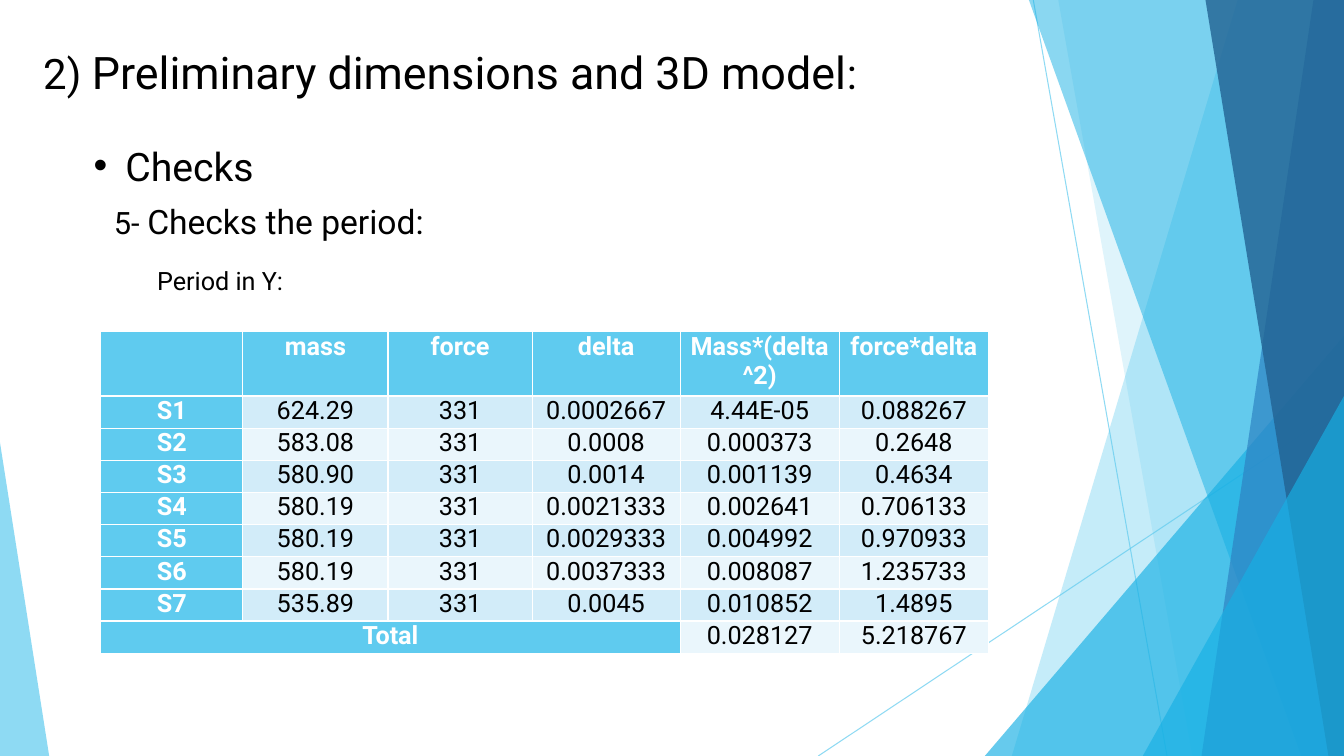
from lxml.etree import SubElement
from pptx import Presentation
from pptx.dml.color import RGBColor
from pptx.enum.shapes import MSO_CONNECTOR, MSO_SHAPE
from pptx.enum.text import MSO_ANCHOR, PP_ALIGN
from pptx.oxml.ns import qn
from pptx.util import Cm, Pt

THEME = {
    "font": "Roboto",
    "text": "000000", "light": "FFFFFF",
    "sky": "5FCBEF", "cyan": "17B0E4", "blue": "2E83C3", "navy": "226292",
    "bands": ("D2ECF9", "EAF6FC"),
    "title": 32, "title_mark": 30, "heading": 28,
    "check": 24, "check_mark": 22, "body": 18,
    "hairline": 0.75,
}
SLIDE_WIDTH, SLIDE_HEIGHT = 33.87, 19.05

# start x, start y, end x, end y
RAYS = [(26.04, 0, 29.41, SLIDE_HEIGHT), (SLIDE_WIDTH, 10.24, 20.62, SLIDE_HEIGHT)]
# Bands reach the right edge: kind, top left x, bottom left x, colour, opacity
# Triangles stand on the bottom edge: kind, left, width, height, peak, colour, opacity
FACETS = [
    ("band", 31.19, 25.5, "sky", 36),
    ("band", 26.67, 30.05, "sky", 20),
    ("triangle", 24.82, 9.05, 10.59, 1, "cyan", 66),
    ("band", 25.93, 32.79, "cyan", 50),
    ("band", 33.1, 30.28, "blue", 70),
    ("band", 30.38, 33.48, "navy", 80),
    ("triangle", 28.8, 5.07, 9.07, 1, "cyan", 66),
    ("triangle", 0, 1.24, 7.9, 0, "sky", 70),
]
# left, top, width, height, bulleted, (text, size) spans
TEXTS = [
    (0.84, 0.99, 22.5, 1.63, False,
     [("2) ", "title_mark"), ("Preliminary dimensions and 3D model", "title"),
      (":", "title_mark")]),
    (2.11, 3.45, 16.84, 1.45, True, [("Checks", "heading")]),
    (2.62, 4.95, 8.66, 1.28, False,
     [("5- ", "check_mark"), ("Checks the period:", "check")]),
    (3.71, 6.55, 8.1, 1.8, False, [("Period in Y:", "body")]),
]
HEADER = ["", "mass", "force", "delta", "Mass*(delta^2)", "force*delta"]
STOREYS = [
    ["S1", "624.29", "331", "0.0002667", "4.44E-05", "0.088267"],
    ["S2", "583.08", "331", "0.0008", "0.000373", "0.2648"],
    ["S3", "580.90", "331", "0.0014", "0.001139", "0.4634"],
    ["S4", "580.19", "331", "0.0021333", "0.002641", "0.706133"],
    ["S5", "580.19", "331", "0.0029333", "0.004992", "0.970933"],
    ["S6", "580.19", "331", "0.0037333", "0.008087", "1.235733"],
    ["S7", "535.89", "331", "0.0045", "0.010852", "1.4895"],
]
TOTAL = ["Total", "", "", "", "0.028127", "5.218767"]
TABLE_LEFT, TABLE_TOP = 2.54, 8.36
COLUMN_WIDTHS = [3.58, 3.66, 3.63, 3.73, 4.01, 3.76]
HEADER_HEIGHT, ROW_HEIGHT = 1.62, 0.81
INDENT = 0.8


def apply(target, values):
    for name, value in values.items():
        setattr(target, name, value)


def colour(name):
    return RGBColor.from_string(THEME.get(name, name))


def set_opacity(shape, percent):
    paint = shape._element.spPr.find(".//" + qn("a:srgbClr"))
    SubElement(paint, qn("a:alpha"), val=str(percent * 1000))


def style_font(font, size, colour_name="text", bold=False):
    apply(font, {"name": THEME["font"], "size": Pt(THEME[size]), "bold": bold})
    font.color.rgb = colour(colour_name)


def add_ray(page, start_x, start_y, end_x, end_y):
    ray = page.shapes.add_connector(
        MSO_CONNECTOR.STRAIGHT, Cm(start_x), Cm(start_y), Cm(end_x), Cm(end_y))
    ray.line.width = Pt(THEME["hairline"])
    ray.line.color.rgb = colour("sky")
    set_opacity(ray, 70)
    SubElement(ray._element.spPr, qn("a:effectLst"))


def add_band(page, top_x, bottom_x):
    builder = page.shapes.build_freeform(Cm(top_x), 0)
    corners = [(SLIDE_WIDTH, 0), (SLIDE_WIDTH, SLIDE_HEIGHT), (bottom_x, SLIDE_HEIGHT)]
    builder.add_line_segments([(Cm(x), Cm(y)) for x, y in corners], close=True)
    return builder.convert_to_shape()


def add_triangle(page, left, width, height, peak):
    triangle = page.shapes.add_shape(
        MSO_SHAPE.ISOSCELES_TRIANGLE,
        Cm(left), Cm(SLIDE_HEIGHT - height), Cm(width), Cm(height))
    triangle.adjustments[0] = peak
    return triangle


def add_facet(page, kind, *values):
    *geometry, colour_name, opacity = values
    facet = {"band": add_band, "triangle": add_triangle}[kind](page, *geometry)
    facet.shadow.inherit = False
    facet.fill.solid()
    facet.fill.fore_color.rgb = colour(colour_name)
    set_opacity(facet, opacity)
    facet.line.fill.background()


def add_text(page, left, top, width, height, bulleted, spans):
    box = page.shapes.add_textbox(Cm(left), Cm(top), Cm(width), Cm(height))
    box.text_frame.word_wrap = True
    para = box.text_frame.paragraphs[0]
    if bulleted:
        properties = para._p.get_or_add_pPr()
        properties.set("marL", str(Cm(INDENT)))
        properties.set("indent", str(-Cm(INDENT)))
        SubElement(properties, qn("a:buFont"), typeface="Arial")
        SubElement(properties, qn("a:buChar"), char="•")
    for text, size in spans:
        span = para.add_run()
        span.text = text
        style_font(span.font, size)


def fill_cell(cell, text, fill, is_label):
    apply(cell, {"margin_left": Cm(0.18), "margin_right": Cm(0.18), "margin_top": 0,
                 "margin_bottom": 0, "vertical_anchor": MSO_ANCHOR.TOP})
    cell.fill.solid()
    cell.fill.fore_color.rgb = colour(fill)
    para = cell.text_frame.paragraphs[0]
    para.alignment = PP_ALIGN.CENTER
    style_font(para.font, "body", "light" if is_label else "text", is_label)
    if text:
        span = para.add_run()
        span.text = text
        style_font(span.font, "body", "light" if is_label else "text", is_label)


def add_period_table(page):
    rows = [HEADER, *STOREYS, TOTAL]
    heights = [HEADER_HEIGHT] + [ROW_HEIGHT] * (len(rows) - 1)
    table = page.shapes.add_table(
        len(rows), len(HEADER), Cm(TABLE_LEFT), Cm(TABLE_TOP),
        Cm(sum(COLUMN_WIDTHS)), Cm(sum(heights))).table
    table.first_col = True
    for column, width in zip(table.columns, COLUMN_WIDTHS):
        column.width = Cm(width)
    for row_index, (texts, height) in enumerate(zip(rows, heights)):
        table.rows[row_index].height = Cm(height)
        for column_index, text in enumerate(texts):
            is_label = row_index == 0 or column_index == 0
            fill = "sky" if is_label else THEME["bands"][(row_index - 1) % 2]
            fill_cell(table.cell(row_index, column_index), text, fill, is_label)
    last = len(rows) - 1
    table.cell(last, 0).merge(table.cell(last, 3))


def main():
    deck = Presentation()
    apply(deck, {"slide_width": Cm(SLIDE_WIDTH), "slide_height": Cm(SLIDE_HEIGHT)})
    page = deck.slides.add_slide(deck.slide_layouts[6])
    for ray in RAYS:
        add_ray(page, *ray)
    for facet in FACETS:
        add_facet(page, *facet)
    for text in TEXTS:
        add_text(page, *text)
    add_period_table(page)
    deck.save("out.pptx")


if __name__ == "__main__":
    main()
